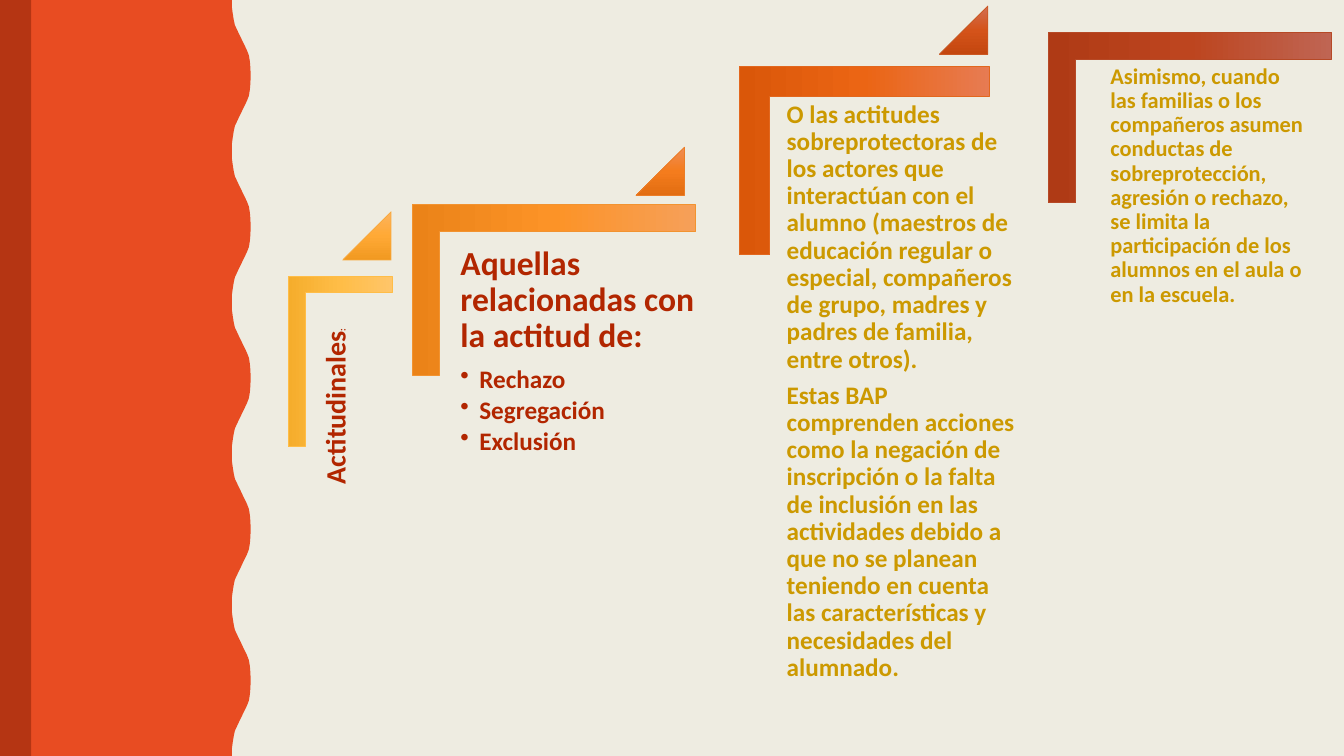
import copy

import pptx
import pptx.dml.color
import pptx.enum.shapes
import pptx.enum.text
import pptx.oxml
import pptx.oxml.ns
import pptx.util

Pt = pptx.util.Pt
SHAPES = pptx.enum.shapes.MSO_SHAPE
qn = pptx.oxml.ns.qn


def color(code):
    return pptx.dml.color.RGBColor.from_string(code)


def write(box, text, size=18, ink="CC9900", after=0.35, bullet=False, new=True):
    frame = box.text_frame
    para = frame.paragraphs[-1]
    if new and para.runs:
        para = frame.add_paragraph()
    if bullet:
        properties = para._p.get_or_add_pPr()
        properties.set("marL", str(Pt(13.5)))
        properties.set("indent", str(-Pt(13.5)))
        mark = pptx.oxml.parse_xml(
            '<a:buChar xmlns:a="http://schemas.openxmlformats.org/drawingml/2006/main" char="•"/>')
        properties.append(mark)
    if new:
        para.line_spacing = 0.9
        para.space_after = Pt(round(size * after, 1))
    span = para.add_run()
    span.text = text
    span.font.name = "Calibri"
    span.font.size = Pt(size)
    span.font.bold = True
    span.font.color.rgb = color(ink)


deck = pptx.Presentation()
deck.slide_width = Pt(960)
deck.slide_height = Pt(540)
page = deck.slides.add_slide(deck.slide_layouts[6])
page.background.fill.solid()
page.background.fill.fore_color.rgb = color("EEECE1")

half_wave = [
    (165.6, 0), (165.6, 5), (166.3, 10), (167, 14.4), (167.8, 18),
    (169.2, 21), (170.6, 24), (172.1, 27), (173.5, 30), (175, 33),
    (176.4, 36), (177.8, 39.6), (178.5, 44), (178.9, 49), (179, 54)]
wave = half_wave + [(x, 108 - y) for x, y in reversed(half_wave[:-1])]
edge = [(Pt(x), Pt(y + 108 * period)) for period in range(5) for x, y in wave]
outline = page.shapes.build_freeform(0, 0, scale=1.0)
outline.add_line_segments(edge + [(0, Pt(540))], close=True)
wavy_panel = outline.convert_to_shape()
side_band = page.shapes.add_shape(SHAPES.RECTANGLE, 0, 0, Pt(22.3), Pt(540))
for panel, code in [(wavy_panel, "E84C22"), (side_band, "B53513")]:
    panel.shadow.inherit = False
    panel.fill.solid()
    panel.fill.fore_color.rgb = color(code)
    panel.line.fill.background()

step_shapes = [
    ("corner", 182.16, 221.04, 121.68, 74.16, ["FFC569", "FFBD47", "F5AD2C"], "FFBD47"),
    ("triangle", 244.8, 151.2, 34.56, 34.56, ["FCB35F", "FFA935", "F19921"], "F9A83B"),
    ("corner", 334.8, 105.84, 121.68, 202.32, ["F6A059", "FC9327", "EB8318"], "F29330"),
    ("triangle", 454.32, 105.12, 34.56, 34.56, ["EF8D55", "F47C1D", "E26D11"], "EB7D26"),
    ("corner", 550.08, 25.2, 134.64, 178.56, ["E77B52", "EB6514", "DA5709"], "E2671E"),
    ("triangle", 671.04, 4.32, 34.56, 34.56, ["D26F53", "D4531A", "C4470F"], "CB5722"),
    ("corner", 789.12, -17.28, 121.68, 202.32, ["BF6553", "BD451F", "AF3A15"], "B64926")]
for kind, left, top, width, height, shades, border in step_shapes:
    preset = SHAPES.CORNER if kind == "corner" else SHAPES.ISOSCELES_TRIANGLE
    shape = page.shapes.add_shape(preset, Pt(left), Pt(top), Pt(width), Pt(height))
    shape.shadow.inherit = False
    if kind == "corner":
        shape.rotation = 90
        shape.adjustments[0] = 0.16
        shape.adjustments[1] = 0.16
    else:
        shape.adjustments[0] = 1
    shape.fill.gradient()
    shape.fill.gradient_angle = 270
    stop_list = shape._element.spPr.find(".//" + qn("a:gsLst"))
    stop_list.insert(1, copy.deepcopy(stop_list[0]))
    for stop, shade, position in zip(shape.fill.gradient_stops, shades, [0, 0.5, 1]):
        stop.color.rgb = color(shade)
        stop.position = position
    shape.line.color.rgb = color(border)
    shape.line.width = Pt(0.5)

text_frames = [
    (178.56, 256.32, 140.4, 50.4, 6),
    (321.84, 168.48, 182.16, 159.84, 7.2),
    (556.56, 66.96, 177.84, 189.36, 5.4),
    (788.4, 41.76, 151.92, 159.84, 4.8)]
boxes = []
for left, top, width, height, inset in text_frames:
    box = page.shapes.add_textbox(Pt(left), Pt(top), Pt(width), Pt(height))
    frame = box.text_frame
    frame.word_wrap = True
    frame.vertical_anchor = pptx.enum.text.MSO_ANCHOR.TOP
    frame.margin_left = frame.margin_right = Pt(inset)
    frame.margin_top = frame.margin_bottom = Pt(inset)
    boxes.append(box)
title_box, attitude_box, overprotection_box, family_box = boxes

title_box.rotation = 270
write(title_box, "Actitudinales", size=20, ink="B22600")
write(title_box, ":", size=7, ink="B22600", new=False)

write(attitude_box, "Aquellas relacionadas con la actitud de:", size=24, ink="B22600")
for attitude in ["Rechazo", "Segregación", "Exclusión"]:
    write(attitude_box, attitude, ink="B22600", after=0.15, bullet=True)

write(overprotection_box,
      "O las actitudes sobreprotectoras de los actores que interactúan con el alumno "
      "(maestros de educación regular o especial, compañeros de grupo, madres y padres "
      "de familia, entre otros).")
write(overprotection_box,
      "Estas BAP comprenden acciones como la negación de inscripción o la falta de "
      "inclusión en las actividades debido a que no se planean teniendo en cuenta las "
      "características y necesidades del alumnado.")
write(family_box,
      "Asimismo, cuando las familias o los compañeros asumen conductas de "
      "sobreprotección, agresión o rechazo, se limita la participación de los alumnos "
      "en el aula o en la escuela.", size=16)

deck.save("out.pptx")
